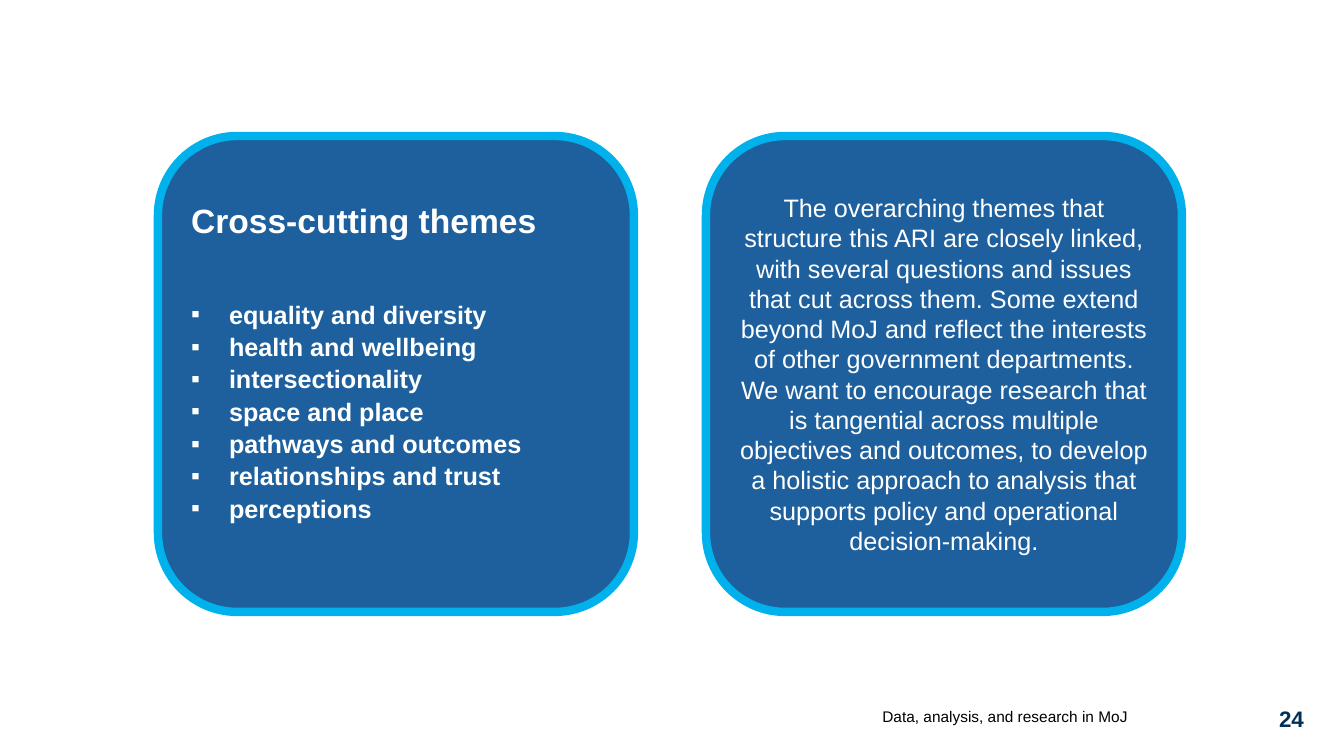
from lxml import etree
from pptx import Presentation
from pptx.dml.color import RGBColor
from pptx.enum.shapes import MSO_SHAPE
from pptx.enum.text import MSO_ANCHOR, MSO_AUTO_SIZE, PP_ALIGN
from pptx.oxml.ns import qn
from pptx.util import Pt

HEADING = "Cross-cutting themes"
THEMES = [
    "equality and diversity",
    "health and wellbeing",
    "intersectionality",
    "space and place",
    "pathways and outcomes",
    "relationships and trust",
    "perceptions",
]
OVERVIEW = (
    "The overarching themes that structure this ARI are closely linked, "
    "with several questions and issues that cut across them. Some extend "
    "beyond MoJ and reflect the interests of other government departments. "
    "We want to encourage research that is tangential across multiple "
    "objectives and outcomes, to develop a holistic approach to analysis "
    "that supports policy and operational decision-making."
)
FOOTER = "Data, analysis, and research in MoJ"
PAGE_NUMBER = "24"

FONT = "Arial"
WHITE, BLACK, NAVY = "FFFFFF", "000000", "003057"
CARD_FILL, CARD_LINE = "1D609D", "00B1EB"
LEFT, CENTER, RIGHT = PP_ALIGN.LEFT, PP_ALIGN.CENTER, PP_ALIGN.RIGHT
TOP, MIDDLE = MSO_ANCHOR.TOP, MSO_ANCHOR.MIDDLE

SLIDE_SIZE = (1344, 756)
CARD_LEFT, CARD_TOP, CARD_SIZE, CARD_GAP = 158, 136, 476, 72
TEXT_LEFT, TEXT_WIDTH, BULLET_INDENT = 191, 410, 38
EMU_PER_PX = 914400 / 100.8


def px(length):
    return round(length * EMU_PER_PX)


def color(value):
    return RGBColor.from_string(value)


def place(shape, left, top, width, height):
    shape.left, shape.top = px(left), px(top)
    shape.width, shape.height = px(width), px(height)


def add_bullet(paragraph):
    properties = paragraph._p.get_or_add_pPr()
    properties.set("marL", str(px(BULLET_INDENT)))
    properties.set("indent", str(-px(BULLET_INDENT)))
    etree.SubElement(properties, qn("a:buFont")).set("typeface", FONT)
    etree.SubElement(properties, qn("a:buChar")).set("char", "▪")


def write(shape, text, size, ink=WHITE, bold=False, align=LEFT,
          anchor=MIDDLE, inset=0, spacing=1.0, bullets=False):
    frame = shape.text_frame
    frame.auto_size = MSO_AUTO_SIZE.NONE
    frame.word_wrap = True
    frame.vertical_anchor = anchor
    frame.margin_left = frame.margin_right = px(inset)
    frame.margin_top = frame.margin_bottom = px(inset)
    frame.text = text
    for paragraph in frame.paragraphs:
        if bullets:
            add_bullet(paragraph)
        paragraph.alignment = align
        paragraph.line_spacing = spacing
        paragraph.space_before = Pt(0)
        font = paragraph.font
        font.name, font.size, font.bold = FONT, Pt(size), bold
        font.color.rgb = color(ink)


def add_card(slide, column):
    left = CARD_LEFT + column * (CARD_SIZE + CARD_GAP)
    bounds = [px(v) for v in (left, CARD_TOP, CARD_SIZE, CARD_SIZE)]
    card = slide.shapes.add_shape(MSO_SHAPE.ROUNDED_RECTANGLE, *bounds)
    card.shadow.inherit = False
    card.fill.solid()
    card.fill.fore_color.rgb = color(CARD_FILL)
    card.line.color.rgb = color(CARD_LINE)
    card.line.width = Pt(6)
    return card


def add_label(slide, bounds, text, **text_format):
    label = slide.shapes.add_textbox(*[px(v) for v in bounds])
    write(label, text, **text_format)


def main():
    presentation = Presentation()
    presentation.slide_width, presentation.slide_height = map(px, SLIDE_SIZE)
    slide = presentation.slides.add_slide(presentation.slide_layouts[1])
    title, body = slide.placeholders

    themes_card, overview_card = [add_card(slide, column) for column in range(2)]
    write(overview_card, OVERVIEW, size=18, align=CENTER, inset=8)

    for placeholder in (title, body):
        themes_card.element.getparent().append(placeholder.element)
    place(title, TEXT_LEFT, 195, TEXT_WIDTH, 48)
    write(title, HEADING, size=24, bold=True, spacing=1.07)
    place(body, TEXT_LEFT, 290, TEXT_WIDTH, 240)
    write(body, "\n".join(THEMES), size=18, bold=True, spacing=1.07, bullets=True)

    add_label(slide, (815, 698, 313, 36), FOOTER, size=11, ink=BLACK, align=RIGHT)
    add_label(slide, (1272, 705, 39, 28), PAGE_NUMBER, size=16, ink=NAVY,
              bold=True, align=CENTER, anchor=TOP)
    presentation.save("out.pptx")


if __name__ == "__main__":
    main()
